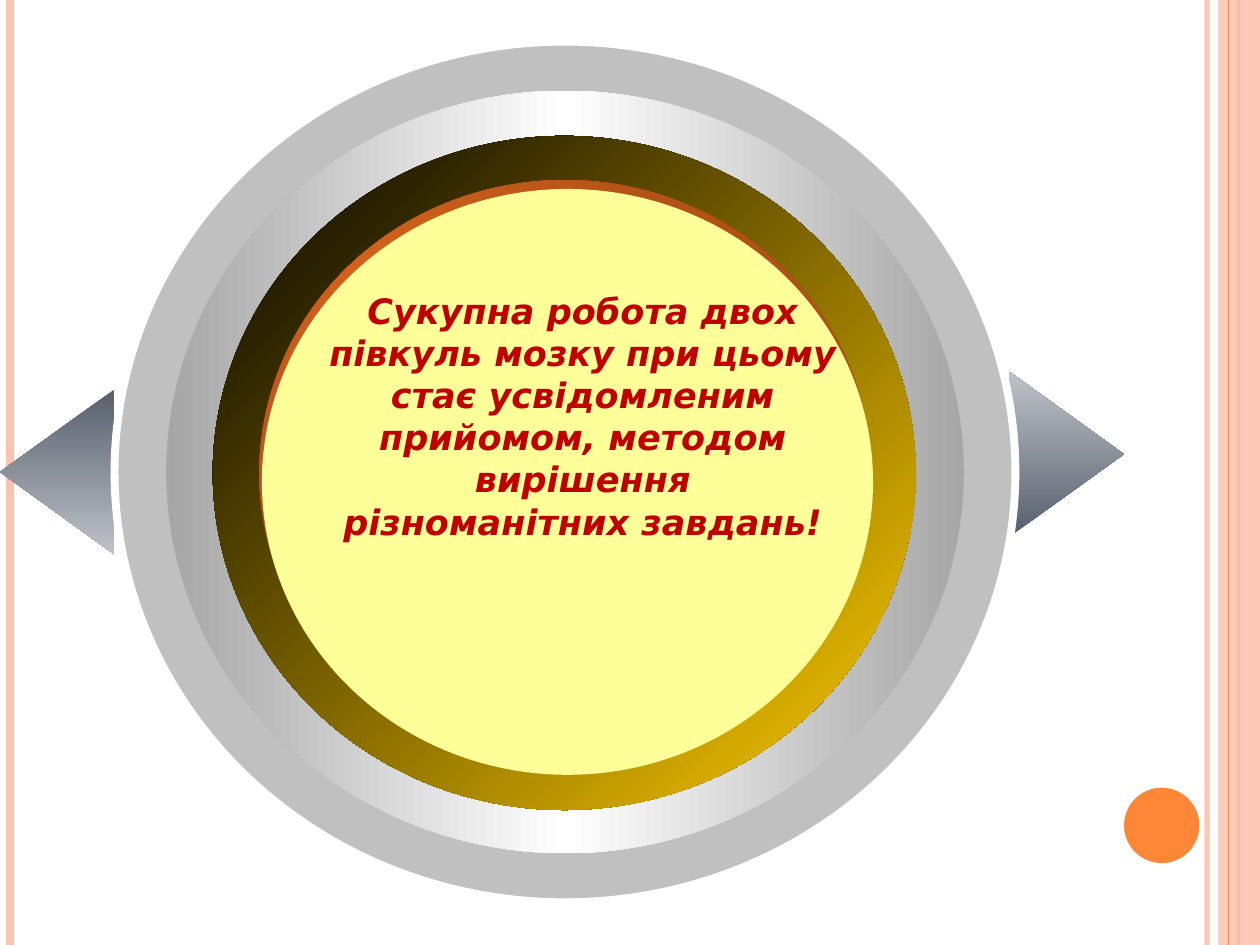
"""Build a slide with a framed round message between two arrows."""
from dataclasses import dataclass

from lxml import etree
from pptx import Presentation
from pptx.dml.color import RGBColor
from pptx.enum.shapes import MSO_CONNECTOR, MSO_SHAPE
from pptx.enum.text import PP_ALIGN
from pptx.oxml.ns import qn
from pptx.util import Cm, Pt

OVAL, RECT, ARROW = MSO_SHAPE.OVAL, MSO_SHAPE.RECTANGLE, MSO_SHAPE.UP_ARROW
STRAIGHT = MSO_CONNECTOR.STRAIGHT
CENTER = PP_ALIGN.CENTER
FONT = "DejaVu Sans"
WIDTH, HEIGHT = 25.4, 19.05
COLORS = {
    "peach": "FEC3AE", "orange": "FE8637", "slate": "575F6D", "mist": "BFC2C8",
    "gray": "C0C0C0", "silver": "A6A6A6", "white": "FFFFFF", "black": "000000",
    "gold": "FFCC00", "brown": "A14A15", "rust": "D2611C", "yellow": "FFFF99",
    "red": "C00000",
}


@dataclass
class Stripe:
    x: float
    color: str
    width: float
    alpha: int = 100


@dataclass
class Figure:
    kind: int
    x: float
    y: float
    w: float
    h: float
    colors: tuple[str, ...]
    angle: int = 0
    alpha: int = 100
    border: float = 0
    rotation: int = 0


STRIPES_BEHIND = [
    Stripe(24.33, "peach", 3, 93),
    Stripe(0.2, "peach", 4.5),
    Stripe(24.97, "orange", 1.5),
]
BAND = Figure(RECT, 24.56, 0, 0.84, HEIGHT, ("peach",), alpha=87)
STRIPE_FRONT = Stripe(24.77, "orange", 0.75)
FIGURES = [
    Figure(OVAL, 22.66, 15.88, 1.52, 1.52, ("orange",)),
    Figure(ARROW, -0.51, 8.36, 3.33, 2.31, ("slate", "mist"), rotation=270),
    Figure(ARROW, 19.84, 8, 3.33, 2.31, ("slate", "mist"), rotation=90),
    Figure(OVAL, 2.31, 0.84, 18.16, 17.35, ("gray",), border=4.5),
    Figure(OVAL, 3.35, 1.83, 16.08, 15.37, ("silver", "white", "silver")),
    Figure(OVAL, 4.29, 2.74, 14.17, 13.59, ("black", "gold"), angle=45),
    Figure(OVAL, 5.23, 3.63, 12.32, 11.81, ("brown", "rust", "brown"), angle=315),
    Figure(OVAL, 5.28, 3.81, 12.32, 11.81, ("yellow",)),
]


def rgb(name: str) -> RGBColor:
    """Return a named colour."""
    return RGBColor.from_string(COLORS[name])


def set_alpha(element, alpha: int) -> None:
    """Make the solid colour inside an element partly transparent."""
    if alpha < 100:
        color = next(element.iter(qn("a:srgbClr")))
        etree.SubElement(color, qn("a:alpha"), val=str(alpha * 1000))


def set_gradient(sp, colors: tuple[str, ...], angle: int) -> None:
    """Fill a shape with evenly spaced colour stops, angle clockwise."""
    sp.fill.gradient()
    sp.fill.gradient_angle = -angle % 360
    stops = next(sp.element.spPr.iter(qn("a:gsLst")))
    for stop in list(stops):
        stops.remove(stop)
    for i, name in enumerate(colors):
        pos = str(100000 * i // (len(colors) - 1))
        stop = etree.SubElement(stops, qn("a:gs"), pos=pos)
        etree.SubElement(stop, qn("a:srgbClr"), val=COLORS[name])


def add_stripe(s, stripe: Stripe) -> None:
    """Draw a vertical line over the full slide height."""
    line = s.shapes.add_connector(STRAIGHT, Cm(stripe.x), Cm(0), Cm(stripe.x), Cm(HEIGHT))
    line.line.color.rgb = rgb(stripe.color)
    line.line.width = Pt(stripe.width)
    set_alpha(line.element.spPr, stripe.alpha)
    etree.SubElement(line.element.spPr, qn("a:effectLst"))


def add_figure(s, fig: Figure) -> None:
    """Draw a filled preset shape."""
    sp = s.shapes.add_shape(fig.kind, Cm(fig.x), Cm(fig.y), Cm(fig.w), Cm(fig.h))
    sp.shadow.inherit = False
    if len(fig.colors) > 1:
        set_gradient(sp, fig.colors, fig.angle)
    else:
        sp.fill.solid()
        sp.fill.fore_color.rgb = rgb(fig.colors[0])
        set_alpha(sp.element.spPr, fig.alpha)
    if fig.border:
        sp.line.color.rgb = rgb("white")
        sp.line.width = Pt(fig.border)
    else:
        sp.line.fill.background()
    if fig.kind == ARROW:
        sp.adjustments[0], sp.adjustments[1] = 0.52, 1
        sp.rotation = fig.rotation
        sp.element.spPr.find(qn("a:xfrm")).set("flipH", "1")


def add_text(s, text: str, x: float, y: float, w: float, h: float, *,
             size: float, color: str, bold: bool = False, italic: bool = False) -> None:
    """Add a centred, wrapped text box."""
    tf = s.shapes.add_textbox(Cm(x), Cm(y), Cm(w), Cm(h)).text_frame
    tf.word_wrap = True
    p = tf.paragraphs[0]
    p.alignment = CENTER
    r = p.add_run()
    r.text = text
    r.font.name, r.font.size = FONT, Pt(size)
    r.font.bold, r.font.italic = bold, italic
    r.font.color.rgb = rgb(color)


def main() -> None:
    """Build and save the slide."""
    prs = Presentation()
    prs.slide_width, prs.slide_height = Cm(WIDTH), Cm(HEIGHT)
    s = prs.slides.add_slide(prs.slide_layouts[6])
    for stripe in STRIPES_BEHIND:
        add_stripe(s, stripe)
    add_figure(s, BAND)
    add_stripe(s, STRIPE_FRONT)
    for fig in FIGURES:
        add_figure(s, fig)
    add_text(s, "Сукупна робота двох півкуль мозку при цьому стає усвідомленим "
             "прийомом, методом вирішення різноманітних завдань!",
             6.35, 5.72, 10.8, 6.25, size=20, color="red", bold=True, italic=True)
    prs.save("out.pptx")


if __name__ == "__main__":
    main()
